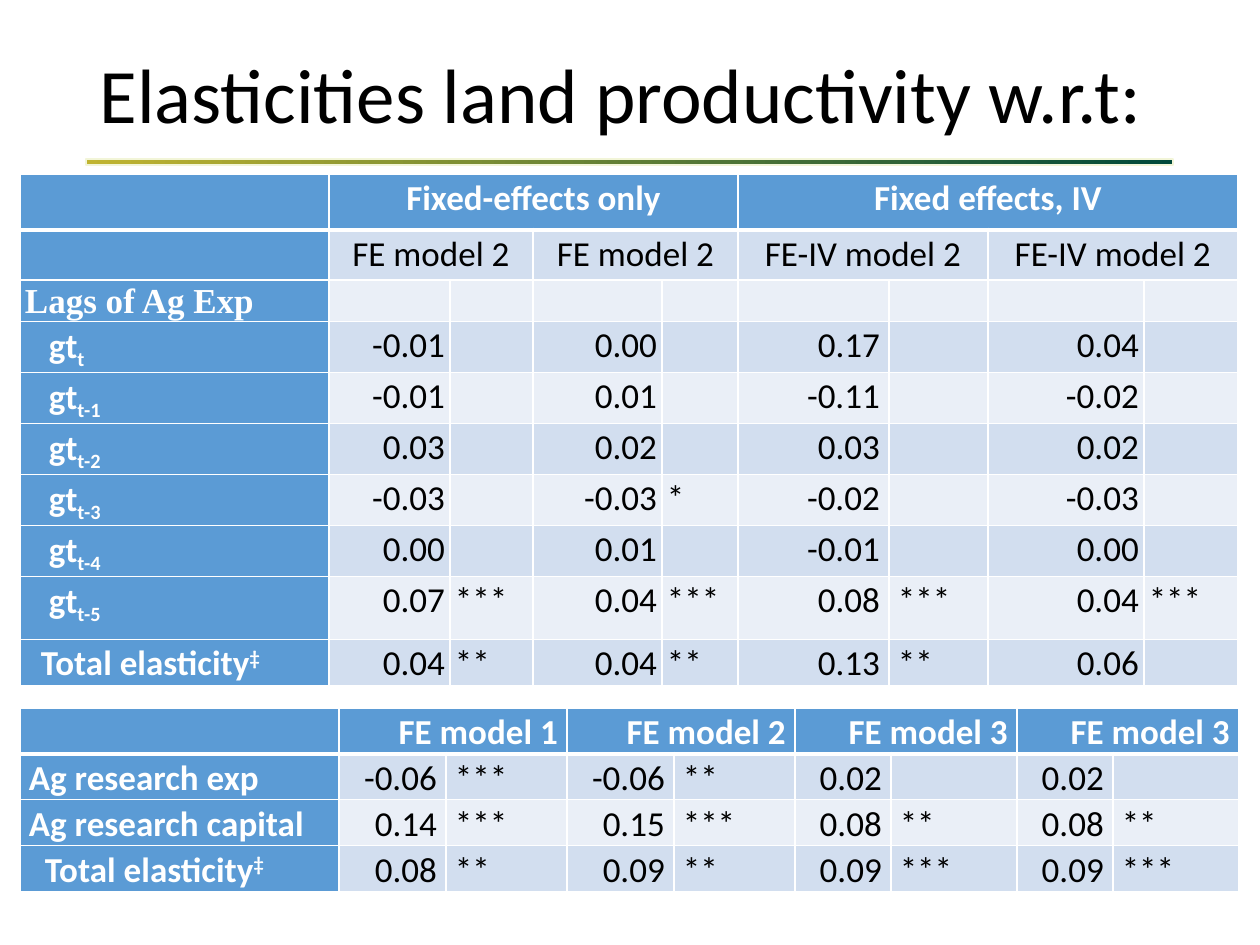
"""Build a slide with two tables of land productivity elasticities."""
from lxml.etree import SubElement
from pptx import Presentation
from pptx.dml.color import RGBColor
from pptx.enum.shapes import MSO_SHAPE
from pptx.enum.text import MSO_ANCHOR, MSO_AUTO_SIZE, PP_ALIGN
from pptx.oxml.ns import qn
from pptx.util import Emu, Pt

BLACK = RGBColor(0x00, 0x00, 0x00)
WHITE = RGBColor(0xFF, 0xFF, 0xFF)
BLUE = RGBColor(0x5B, 0x9B, 0xD5)
BANDS = (RGBColor(0xEA, 0xEF, 0xF7), RGBColor(0xD2, 0xDE, 0xEF))
GOLD = RGBColor(0xC0, 0xB4, 0x30)
GREEN = RGBColor(0x00, 0x49, 0x3A)
CREAM = RGBColor(0xF2, 0xF5, 0xD8)


def px(n):
    return Emu(round(n * 914400 / 126))


def add_borders(cell, top, bottom):
    tcPr = cell._tc.get_or_add_tcPr()
    for i, (side, width) in enumerate(zip("LRTB", (1, 1, top, bottom))):
        ln = SubElement(tcPr, qn(f"a:ln{side}"), w=str(Pt(width)))
        fill = SubElement(ln, qn("a:solidFill"))
        SubElement(fill, qn("a:srgbClr"), val=str(WHITE))
        tcPr.insert(i, ln)


prs = Presentation()
prs.slide_width, prs.slide_height = px(1260), px(945)
s = prs.slides.add_slide(prs.slide_layouts[5])

title = s.shapes.title
title.left, title.top, title.width, title.height = px(87), px(47), px(1086), px(103)
tf = title.text_frame
tf.text = "Elasticities land productivity w.r.t:"
tf.auto_size = MSO_AUTO_SIZE.NONE
tf.vertical_anchor = MSO_ANCHOR.MIDDLE
p = tf.paragraphs[0]
p.alignment = PP_ALIGN.LEFT
p.line_spacing = 0.9
r = p.runs[0]
r.font.name, r.font.size = "Calibri", Pt(44)
r.font.color.rgb = BLACK

rule = s.shapes.add_shape(MSO_SHAPE.RECTANGLE, px(86), px(159), px(1087), px(6))
rule.shadow.inherit = False
rule.fill.gradient()
rule.fill.gradient_angle = 0
for stop, color in zip(rule.fill.gradient_stops, (GOLD, GREEN)):
    stop.color.rgb = color
rule.line.color.rgb = CREAM
rule.line.width = Pt(1)

lag_rows = [
    ["", "Fixed-effects only", "", "", "", "Fixed effects, IV", "", "", ""],
    ["", "FE model 2", "", "FE model 2", "", "FE-IV model 2", "", "FE-IV model 2", ""],
    ["Lags of Ag Exp", "", "", "", "", "", "", "", ""],
    ["gt_t", "-0.01", "", "0.00", "", "0.17", "", "0.04", ""],
    ["gt_t-1", "-0.01", "", "0.01", "", "-0.11", "", "-0.02", ""],
    ["gt_t-2", "0.03", "", "0.02", "", "0.03", "", "0.02", ""],
    ["gt_t-3", "-0.03", "", "-0.03", "*", "-0.02", "", "-0.03", ""],
    ["gt_t-4", "0.00", "", "0.01", "", "-0.01", "", "0.00", ""],
    ["gt_t-5", "0.07", "***", "0.04", "***", "0.08", "***", "0.04", "***"],
    ["Total elasticity_‡", "0.04", "**", "0.04", "**", "0.13", "**", "0.06", ""],
]
research_rows = [
    ["", "FE model 1", "", "FE model 2", "", "FE model 3", "", "FE model 3", ""],
    ["Ag research exp", "-0.06", "***", "-0.06", "**", "0.02", "", "0.02", ""],
    ["Ag research capital", "0.14", "***", "0.15", "***", "0.08", "**", "0.08", "**"],
    ["Total elasticity_‡", "0.08", "**", "0.09", "**", "0.09", "***", "0.09", "***"],
]
tables = [
    (174, lag_rows, [309, 121, 83, 129, 76, 151, 99, 156, 94],
     [56, 50, 41] + [51] * 5 + [63, 46], (4, 2), PP_ALIGN.CENTER, (5, 6)),
    (708, research_rows, [319] + [107, 121] * 2 + [96, 126] * 2,
     [45] * 4, (2,), PP_ALIGN.RIGHT, range(9)),
]
indents = {"gt": 24, "Total elasticity": 16}

for top, rows, widths, heights, spans, head_align, wide_cols in tables:
    frame = s.shapes.add_table(len(rows), len(widths), px(20), px(top),
                               px(sum(widths)), px(sum(heights)))
    tbl = frame.table
    for col, width in zip(tbl.columns, widths):
        col.width = px(width)
    for row, height in zip(tbl.rows, heights):
        row.height = px(height)
    for i, row in enumerate(rows):
        for j, text in enumerate(row):
            cell = tbl.cell(i, j)
            label, _, mark = text.partition("_")
            head = i == 0 or j == 0
            margin = 9 if j in wide_cols else 5
            cell.margin_left = px(margin + indents.get(label, 0))
            cell.margin_right = px(margin)
            cell.margin_top = cell.margin_bottom = 0
            cell.fill.solid()
            cell.fill.fore_color.rgb = BLUE if head else BANDS[i % 2]
            add_borders(cell, 3 if i == 1 else 1, 3 if i == 0 else 1)
            if i < len(spans) and j % spans[i] == 1:
                cell.merge(tbl.cell(i, j + spans[i] - 1))
            if not text:
                continue
            p = cell.text_frame.paragraphs[0]
            p.line_spacing = 1.07
            if i < len(spans):
                p.alignment = head_align
            else:
                p.alignment = PP_ALIGN.RIGHT if j % 2 else PP_ALIGN.LEFT
            for part in filter(None, (label, mark)):
                r = p.add_run()
                r.text = part
                r.font.name = "Times New Roman" if label.startswith("Lags") else "Calibri"
                r.font.size = Pt(20)
                r.font.bold = head
                r.font.color.rgb = WHITE if head else BLACK
            if mark:
                r._r.get_or_add_rPr().set("baseline", "30000" if mark == "‡" else "-25000")

prs.save("out.pptx")
